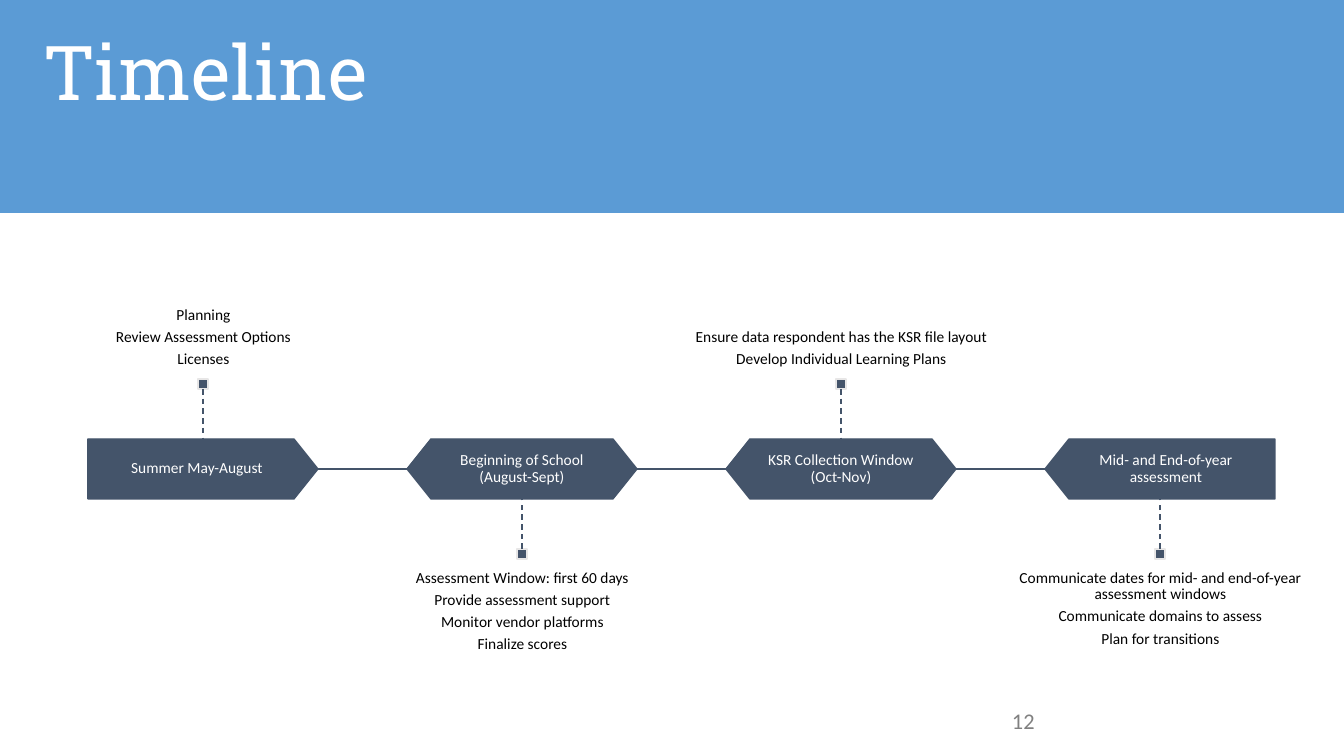
from lxml import etree
from pptx import Presentation
from pptx import util as u
from pptx.dml.color import RGBColor
from pptx.enum import dml, shapes, text

PX = 914400 / 100.8
SLATE, PALE, BLUE = "44546A", "E7E6E6", "5B9BD5"
WHITE, BLACK, GREY = "FFFFFF", "000000", "808080"


def px(n):
    return u.Emu(round(n * PX))


def rgb(value):
    return RGBColor.from_string(value)


class Deck:
    """Holds the presentation, the current slide and the text style."""

    label = {"size": 11, "font": "Calibri", "color": BLACK}
    para = {"alignment": text.PP_ALIGN.CENTER, "line_spacing": 0.9,
            "space_after": u.Pt(3.85)}

    def __init__(self, width, height):
        self.prs = Presentation()
        self.prs.slide_width, self.prs.slide_height = px(width), px(height)
        self.slide = self.prs.slides.add_slide(self.prs.slide_layouts[5])

    def fill_text(self, sp, lines, margins, anchor, style, para):
        tf = sp.text_frame
        side, end = (px(m) for m in margins)
        frame = {"word_wrap": True, "auto_size": text.MSO_AUTO_SIZE.NONE,
                 "vertical_anchor": anchor, "margin_left": side,
                 "margin_right": side, "margin_top": end, "margin_bottom": end}
        for name, value in frame.items():
            setattr(tf, name, value)
        for i, line in enumerate(lines):
            p = tf.paragraphs[0] if i == 0 else tf.add_paragraph()
            for name, value in para.items():
                setattr(p, name, value)
            r = p.add_run()
            r.text = line
            r.font.size, r.font.name = u.Pt(style["size"]), style["font"]
            r.font.color.rgb = rgb(style["color"])

    def title(self, box, line, style):
        sp = self.slide.shapes.title
        sp.left, sp.top, sp.width, sp.height = map(px, box)
        self.fill_text(sp, [line], (0, 0), text.MSO_ANCHOR.TOP, style,
                       {"alignment": text.PP_ALIGN.LEFT, "line_spacing": 0.9})

    def textbox(self, box, lines, margins, anchor, style=label, para=para):
        sp = self.slide.shapes.add_textbox(*map(px, box))
        self.fill_text(sp, lines, margins, anchor, style, para)

    def shape(self, kind, box, fill, line=None):
        sp = self.slide.shapes.add_shape(kind, *map(px, box))
        sp.shadow.inherit = False
        sp.fill.solid()
        sp.fill.fore_color.rgb = rgb(fill)
        if line:
            sp.line.color.rgb = rgb(line)
            sp.line.width = u.Pt(1)
        else:
            sp.line.fill.background()
        return sp

    def connector(self, x1, y1, x2, y2, dash=None):
        cx = self.slide.shapes.add_connector(
            shapes.MSO_CONNECTOR.STRAIGHT, *map(px, (x1, y1, x2, y2)))
        cx.line.color.rgb = rgb(SLATE)
        cx.line.width = u.Pt(1)
        if dash:
            cx.line.dash_style = dash
        ns = "{http://schemas.openxmlformats.org/drawingml/2006/main}"
        etree.SubElement(cx._element.spPr, ns + "effectLst")
        return cx


HOME, HEX = shapes.MSO_SHAPE.PENTAGON, shapes.MSO_SHAPE.HEXAGON
RECT = shapes.MSO_SHAPE.RECTANGLE
# Arrow shape, rotation, label offset and width, label, details
STEPS = [
    (HOME, 0, 0, 218, "Summer May-August",
     ["Planning", "Review Assessment Options", "Licenses"]),
    (HEX, 0, 27, 176, "Beginning of School (August-Sept)",
     ["Assessment Window: first 60 days", "Provide assessment support",
      "Monitor vendor platforms", "Finalize scores"]),
    (HEX, 0, 27, 176, "KSR Collection Window (Oct-Nov)",
     ["Ensure data respondent has the KSR file layout",
      "Develop Individual Learning Plans"]),
    (HOME, 180, 12, 218, "Mid- and End-of-year assessment",
     ["Communicate dates for mid- and end-of-year assessment windows",
      "Communicate domains to assess", "Plan for transitions"]),
]
LEFT, PITCH, WIDTH = 88, 319, 230
TOP, HEIGHT = 439, 60
MARK, STEM, DETAIL_H = 10, 50, 161


def main():
    deck = Deck(1344, 756)

    # Header band behind the title
    band = deck.shape(RECT, (0, -1, 1344, 214), BLUE)
    deck.slide.shapes._spTree.insert(2, band._element)
    deck.title((43, 35, 1258, 146), "Timeline",
               {"size": 54, "font": "Roboto Slab", "color": WHITE})

    # Page number
    deck.textbox((1002, 701, 302, 40), ["12"], (10, 5), text.MSO_ANCHOR.MIDDLE,
                 {"size": 16, "font": "Calibri", "color": GREY},
                 {"space_after": u.Pt(6)})

    # Timeline steps, details alternating above and below
    for i, (kind, turn, dx, label_w, label, details) in enumerate(STEPS):
        x = LEFT + i * PITCH
        mid = x + WIDTH // 2
        step = deck.shape(kind, (x, TOP, WIDTH, HEIGHT), SLATE, SLATE)
        step.adjustments[0] = 0.4
        step.rotation = turn
        deck.textbox((x + dx, TOP, label_w, HEIGHT), [label], (9, 9),
                     text.MSO_ANCHOR.MIDDLE, {**deck.label, "color": WHITE})
        if i < len(STEPS) - 1:
            deck.connector(x + WIDTH, TOP + HEIGHT // 2,
                           x + PITCH, TOP + HEIGHT // 2)

        if i % 2 == 0:
            edge, mark_y, side = TOP, TOP - STEM - MARK, 2
            stem_y = mark_y + MARK
            detail_y, anchor = mark_y - DETAIL_H, text.MSO_ANCHOR.BOTTOM
        else:
            edge, mark_y, side = TOP + HEIGHT, TOP + HEIGHT + STEM, 0
            stem_y = mark_y
            detail_y, anchor = mark_y + MARK, text.MSO_ANCHOR.TOP
        deck.textbox((mid - PITCH // 2, detail_y, PITCH, DETAIL_H), details,
                     (0, 11), anchor)
        mark = deck.shape(RECT, (mid - MARK // 2, mark_y, MARK, MARK),
                          SLATE, PALE)
        stem = deck.connector(mid, stem_y, mid, edge, dml.MSO_LINE.DASH)
        stem.begin_connect(mark, side)

    deck.prs.save("out.pptx")


if __name__ == "__main__":
    main()
